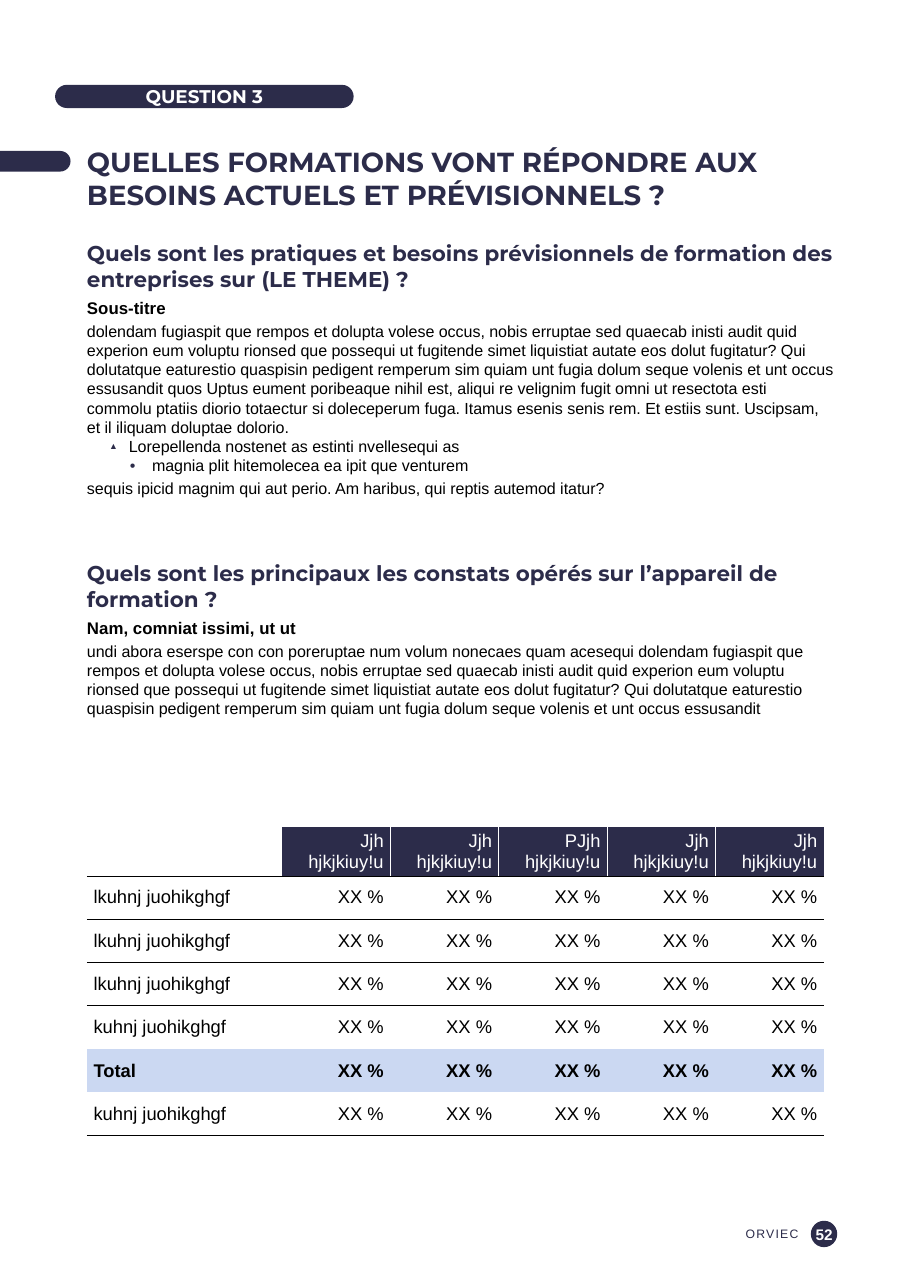
import pptx
import pptx.util
import pptx.dml.color
import pptx.enum.shapes
import pptx.enum.text
import pptx.oxml.ns
import lxml.etree

Inches, Pt = pptx.util.Inches, pptx.util.Pt
SHAPE = pptx.enum.shapes.MSO_SHAPE
ALIGN = pptx.enum.text.PP_ALIGN
ANCHOR = pptx.enum.text.MSO_ANCHOR

PAGE_WIDTH, PAGE_HEIGHT = Inches(8.27), Inches(11.69)
NAVY, PALE_BLUE, WHITE, BLACK = "2C2C4A", "CBD8F2", "FFFFFF", "000000"
HEADING_FONT, TEXT_FONT = "Montserrat", "Arial"

TITLE = "QUELLES FORMATIONS VONT RÉPONDRE AUX BESOINS ACTUELS ET PRÉVISIONNELS ?"

STYLES = {
    "heading": dict(size=14, font=HEADING_FONT, color=NAVY, bold=True, before=12),
    "subtitle": dict(size=11, bold=True, before=4),
    "text": dict(size=10.5, before=2),
    "triangle": dict(size=10.5, level=1, bullet="▲", bullet_size=55, margin=0.38, hanging=0.18),
    "dot": dict(size=10.5, level=2, bullet="•", margin=0.59, hanging=0.2),
}

BODY = [
    ("heading", "Quels sont les pratiques et besoins prévisionnels de formation des "
                "entreprises sur (LE THEME) ?", {"before": 0}),
    ("subtitle", "Sous-titre", {}),
    ("text", "dolendam fugiaspit que rempos et dolupta volese occus, nobis erruptae sed quaecab "
             "inisti audit quid experion eum voluptu rionsed que possequi ut fugitende simet "
             "liquistiat autate eos dolut fugitatur? Qui dolutatque eaturestio quaspisin pedigent "
             "remperum sim quiam unt fugia dolum seque volenis et unt occus essusandit quos Uptus "
             "eument poribeaque nihil est, aliqui re velignim fugit omni ut resectota esti commolu "
             "ptatiis diorio totaectur si doleceperum fuga. Itamus esenis senis rem. Et estiis "
             "sunt. Uscipsam, et il iliquam doluptae dolorio.", {}),
    ("triangle", "Lorepellenda nostenet as estinti nvellesequi as", {}),
    ("dot", "magnia plit hitemolecea ea ipit que venturem", {}),
    ("text", "sequis ipicid magnim qui aut perio. Am haribus, qui reptis autemod itatur?", {}),
    ("heading", "Quels sont les principaux les constats opérés sur l’appareil de formation ?",
     {"before": 41}),
    ("subtitle", "Nam, comniat issimi, ut ut", {}),
    ("text", "undi abora eserspe con con poreruptae num volum nonecaes quam acesequi dolendam "
             "fugiaspit que rempos et dolupta volese occus, nobis erruptae sed quaecab inisti "
             "audit quid experion eum voluptu rionsed que possequi ut fugitende simet liquistiat "
             "autate eos dolut fugitatur? Qui dolutatque eaturestio quaspisin pedigent remperum "
             "sim quiam unt fugia dolum seque volenis et unt occus essusandit", {}),
]

COLUMN_HEADS = ["Jjh", "Jjh", "PJjh", "Jjh", "Jjh"]
ROW_HEADS = ["lkuhnj juohikghgf"] * 3 + ["kuhnj juohikghgf", "Total", "kuhnj juohikghgf"]
RULED_ROWS = {0, 1, 2, 3, 6}


def page_box(left, top, width, height):
    """Turn percentages of the page into left, top, width, height."""
    return (int(PAGE_WIDTH * left / 100), int(PAGE_HEIGHT * top / 100),
            int(PAGE_WIDTH * width / 100), int(PAGE_HEIGHT * height / 100))


def rgb(color):
    return pptx.dml.color.RGBColor.from_string(color)


def add_element(parent, tag, **attributes):
    return lxml.etree.SubElement(parent, pptx.oxml.ns.qn(tag), attributes)


def write(paragraph, text, size=12, font=TEXT_FONT, color=BLACK, bold=False, align=ALIGN.LEFT,
          before=0, level=0, bullet=None, bullet_size=100, margin=0, hanging=0, tracking=0):
    paragraph.level, paragraph.alignment = level, align
    paragraph.line_spacing = 1.0
    paragraph.space_before, paragraph.space_after = Pt(before), Pt(0)
    properties = paragraph._p.get_or_add_pPr()
    properties.set("marL", str(Inches(margin)))
    properties.set("indent", str(-Inches(hanging)))
    if bullet:
        add_element(add_element(properties, "a:buClr"), "a:srgbClr", val=NAVY)
        add_element(properties, "a:buSzPct", val=str(bullet_size * 1000))
        add_element(properties, "a:buFont", typeface=TEXT_FONT)
        add_element(properties, "a:buChar", char=bullet)
    else:
        add_element(properties, "a:buNone")
    run = paragraph.add_run()
    run.text = text
    run.font.size, run.font.name, run.font.bold = Pt(size), font, bold
    run.font.color.rgb = rgb(color)
    if tracking:
        run._r.get_or_add_rPr().set("spc", str(int(tracking * 100)))


def prepare_frame(shape, anchor=ANCHOR.MIDDLE, wrap=True):
    """Remove the margins and return the text frame."""
    frame = shape.text_frame
    frame.margin_left = frame.margin_top = frame.margin_right = frame.margin_bottom = 0
    frame.vertical_anchor, frame.word_wrap = anchor, wrap
    frame.auto_size = pptx.enum.text.MSO_AUTO_SIZE.NONE
    return frame


def add_navy_shape(slide, kind, box):
    shape = slide.shapes.add_shape(kind, *box)
    shape.shadow.inherit = False
    shape.fill.solid()
    shape.fill.fore_color.rgb = rgb(NAVY)
    shape.line.fill.background()
    return shape


def place(shape, box):
    shape.left, shape.top, shape.width, shape.height = box


def add_question_label(slide, box):
    pill = add_navy_shape(slide, SHAPE.ROUNDED_RECTANGLE, box)
    pill.adjustments[0] = 0.5
    write(prepare_frame(pill).paragraphs[0], "QUESTION 3", font=HEADING_FONT,
          color=WHITE, bold=True, align=ALIGN.CENTER)


def add_edge_tab(slide, box):
    left, top, width, height = box
    shift = (width - height) // 2
    tab = add_navy_shape(slide, SHAPE.ROUND_2_SAME_RECTANGLE,
                         (left + shift, top - shift, height, width))
    tab.adjustments[0] = 0.5
    tab.rotation = 90


def fill_title(slide, box):
    title = slide.shapes.title
    place(title, box)
    write(prepare_frame(title, ANCHOR.TOP).paragraphs[0], TITLE, size=18,
          font=HEADING_FONT, color=NAVY, bold=True)


def fill_body(slide, box):
    body = slide.placeholders[1]
    place(body, box)
    frame = prepare_frame(body, ANCHOR.TOP)
    for index, (style, text, changes) in enumerate(BODY):
        paragraph = frame.add_paragraph() if index else frame.paragraphs[0]
        write(paragraph, text, **{**STYLES[style], **changes})


def set_borders(cell, **colors):
    """Draw the named sides (L, R, T, B) and clear the others."""
    properties = cell._tc.get_or_add_tcPr()
    for index, side in enumerate("LRTB"):
        line = add_element(properties, "a:ln" + side, w=str(Pt(0.5)))
        if side in colors:
            add_element(add_element(line, "a:solidFill"), "a:srgbClr", val=colors[side])
        else:
            add_element(line, "a:noFill")
        properties.insert(index, line)


def format_cell(cell, row, column):
    header = row == 0 and column > 0
    total = row > 0 and ROW_HEADS[row - 1] == "Total"
    cell.margin_top = cell.margin_bottom = 0
    cell.margin_left = 0 if column else Inches(0.06)
    cell.margin_right = Inches(0.06) if column else 0
    cell.vertical_anchor = ANCHOR.MIDDLE
    if header or total:
        cell.fill.solid()
        cell.fill.fore_color.rgb = rgb(NAVY if header else PALE_BLUE)
    else:
        cell.fill.background()
    borders = {}
    if row in RULED_ROWS:
        borders["B"] = BLACK
    if row - 1 in RULED_ROWS:
        borders["T"] = BLACK
    if header and column > 1:
        borders["L"] = WHITE
    if header and column < len(COLUMN_HEADS):
        borders["R"] = WHITE
    set_borders(cell, **borders)

    if header:
        lines = [COLUMN_HEADS[column - 1], "hjkjkiuy!u"]
    elif row:
        lines = ["XX %" if column else ROW_HEADS[row - 1]]
    else:
        lines = []
    for index, text in enumerate(lines):
        paragraph = cell.text_frame.add_paragraph() if index else cell.text_frame.paragraphs[0]
        write(paragraph, text, color=WHITE if header else BLACK, bold=total,
              align=ALIGN.RIGHT if column else ALIGN.LEFT)


def add_rates_table(slide, box):
    width, height = box[2:]
    row_count, column_count = len(ROW_HEADS) + 1, len(COLUMN_HEADS) + 1
    table = slide.shapes.add_table(row_count, column_count, *box).table
    table.first_row = table.horz_banding = False
    first_width, first_height = Inches(1.77), Inches(0.44)
    for index, column in enumerate(table.columns):
        column.width = (width - first_width) // len(COLUMN_HEADS) if index else first_width
    for index, row in enumerate(table.rows):
        row.height = (height - first_height) // len(ROW_HEADS) if index else first_height
    for row in range(row_count):
        for column in range(column_count):
            format_cell(table.cell(row, column), row, column)


def add_footer(slide, box):
    left, top, width, height = box
    circle = add_navy_shape(slide, SHAPE.OVAL, (left + width - height, top, height, height))
    write(prepare_frame(circle, wrap=False).paragraphs[0], "52", size=10, color=WHITE,
          bold=True, align=ALIGN.CENTER)
    label = slide.shapes.add_textbox(left, top, int(width - 1.46 * height), height)
    write(prepare_frame(label).paragraphs[0], "ORVIEC", size=8, color=NAVY,
          align=ALIGN.RIGHT, tracking=0.8)


def main():
    presentation = pptx.Presentation()
    presentation.slide_width, presentation.slide_height = PAGE_WIDTH, PAGE_HEIGHT
    slide = presentation.slides.add_slide(presentation.slide_layouts[1])
    add_footer(slide, page_box(73.52, 94.78, 18.38, 2.05))
    add_question_label(slide, page_box(6.05, 6.59, 32.77, 1.8))
    add_edge_tab(slide, page_box(0, 11.72, 7.74, 1.6))
    fill_title(slide, page_box(9.55, 11.29, 82.1, 5.22))
    fill_body(slide, page_box(9.55, 18.65, 82.1, 43.8))
    add_rates_table(slide, page_box(9.55, 64.24, 80.9, 23.95))
    presentation.save("out.pptx")


if __name__ == "__main__":
    main()
